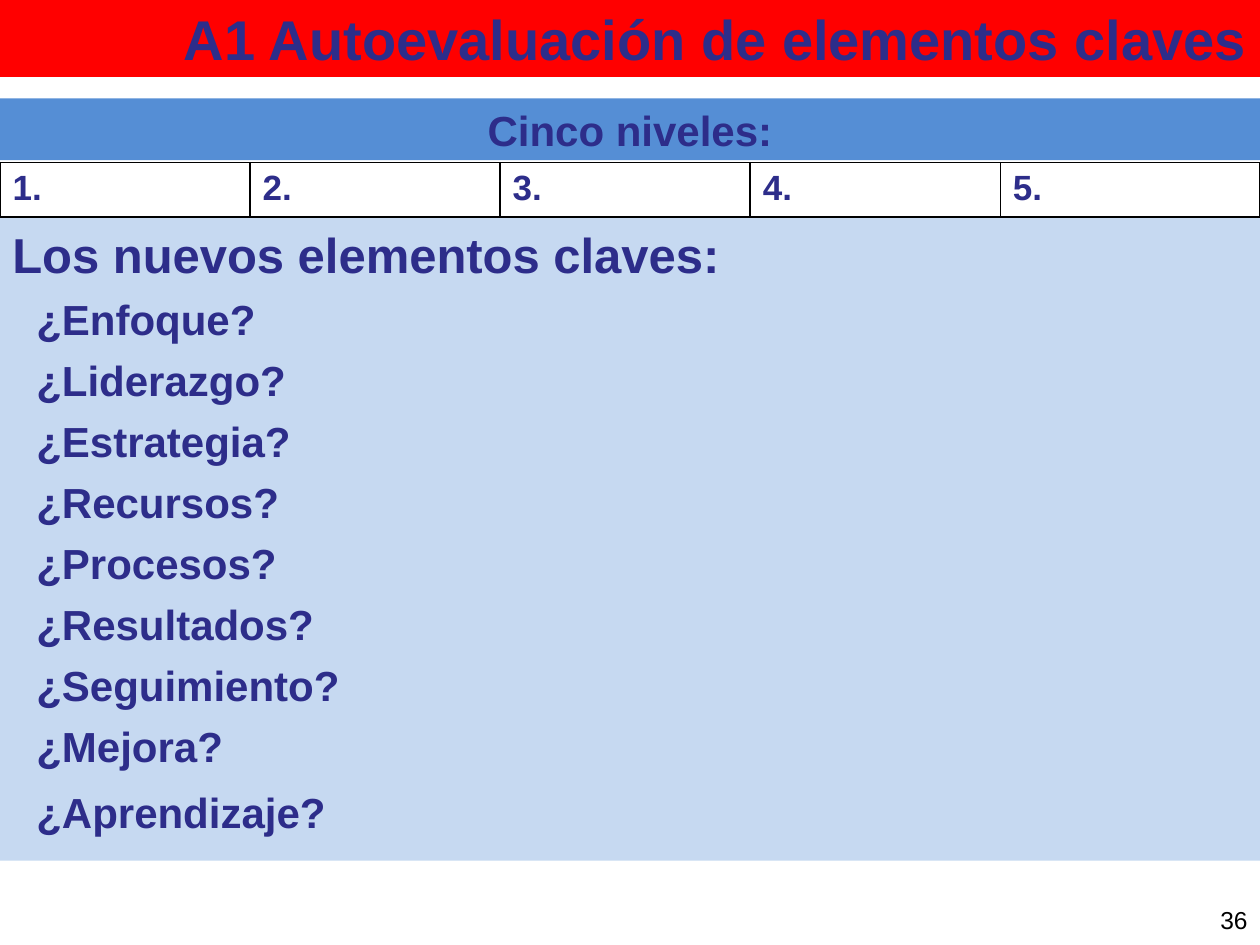
from dataclasses import dataclass

import lxml.etree
import pptx
import pptx.dml.color
import pptx.enum.shapes
import pptx.enum.text
import pptx.oxml.ns
import pptx.util

Pt = pptx.util.Pt
Align = pptx.enum.text.PP_ALIGN
Anchor = pptx.enum.text.MSO_ANCHOR

COLOURS = {
    "title": "FF0000",
    "banner": "558ED5",
    "panel": "C6D9F1",
    "cell": "FFFFFF",
    "border": "000000",
    "text": "2D2D8A",
    "number": "000000",
}
PAGE_WIDTH = 720
PAGE_HEIGHT = 540
ELEMENTS = ["Enfoque", "Liderazgo", "Estrategia", "Recursos", "Procesos",
            "Resultados", "Seguimiento", "Mejora", "Aprendizaje"]
LEVEL_COUNT = 5
LEVEL_WIDTH = 142.9


@dataclass
class Line:
    text: str
    size: float
    align: Align = Align.LEFT
    colour: str = "text"
    bold: bool = True
    level: int = 0
    margin: float = 0
    before: float = 0
    after: float = 0


@dataclass
class Band:
    top: float
    height: float
    fill: str
    lines: list[Line]
    anchor: Anchor = Anchor.MIDDLE


def rgb(name: str) -> pptx.dml.color.RGBColor:
    return pptx.dml.color.RGBColor.from_string(COLOURS[name])


def write_lines(frame, lines: list[Line]) -> None:
    for index, line in enumerate(lines):
        para = frame.paragraphs[0] if index == 0 else frame.add_paragraph()
        para.text = line.text
        para.level = line.level
        para.alignment = line.align
        para.space_before = Pt(line.before)
        para.space_after = Pt(line.after)
        properties = para._p.get_or_add_pPr()
        properties.set("marL", str(Pt(line.margin)))
        properties.set("indent", "0")
        para.font.name = "Arial"
        para.font.size = Pt(line.size)
        para.font.bold = line.bold
        para.font.color.rgb = rgb(line.colour)


def draw_band(page, band: Band) -> None:
    box = page.shapes.add_shape(
        pptx.enum.shapes.MSO_SHAPE.RECTANGLE,
        0, Pt(band.top), Pt(PAGE_WIDTH), Pt(band.height))
    box.shadow.inherit = False
    box.fill.solid()
    box.fill.fore_color.rgb = rgb(band.fill)
    box.line.fill.background()
    frame = box.text_frame
    frame.word_wrap = True
    frame.vertical_anchor = band.anchor
    write_lines(frame, band.lines)


def outline_cell(cell) -> None:
    properties = cell._tc.get_or_add_tcPr()
    qn = pptx.oxml.ns.qn
    for index, side in enumerate(("lnL", "lnR", "lnT", "lnB")):
        border = lxml.etree.Element(qn(f"a:{side}"), w=str(Pt(1)))
        fill = lxml.etree.SubElement(border, qn("a:solidFill"))
        lxml.etree.SubElement(fill, qn("a:srgbClr"), val=COLOURS["border"])
        properties.insert(index, border)


def draw_levels(page, top: float, height: float) -> None:
    table = page.shapes.add_table(
        1, LEVEL_COUNT, 0, Pt(top), Pt(PAGE_WIDTH), Pt(height)).table
    table.first_row = False
    table.horz_banding = False
    last_width = PAGE_WIDTH - LEVEL_WIDTH * (LEVEL_COUNT - 1)
    for index in range(LEVEL_COUNT):
        is_last = index == LEVEL_COUNT - 1
        table.columns[index].width = Pt(last_width if is_last else LEVEL_WIDTH)
        cell = table.cell(0, index)
        cell.fill.solid()
        cell.fill.fore_color.rgb = rgb("cell")
        write_lines(cell.text_frame, [Line(f"{index + 1}.", 20)])
        outline_cell(cell)


def draw_page_number(page, number: int) -> None:
    box = page.shapes.add_textbox(Pt(491.8), Pt(511.2), Pt(228.2), Pt(28.8))
    box.text_frame.word_wrap = True
    box.text_frame.vertical_anchor = Anchor.MIDDLE
    write_lines(box.text_frame, [
        Line(str(number), 14, Align.RIGHT, "number", bold=False)])


def main() -> None:
    deck = pptx.Presentation()
    deck.slide_width = Pt(PAGE_WIDTH)
    deck.slide_height = Pt(PAGE_HEIGHT)
    page = deck.slides.add_slide(deck.slide_layouts[6])

    questions = [
        Line(f"¿{element}?", 24, level=1, margin=13.7, before=3, after=3)
        for element in ELEMENTS]
    questions[-1].before = 6.4
    heading = Line("Los nuevos elementos claves:", 28, after=3)

    draw_band(page, Band(124.6, 367.2, "panel", [heading, *questions],
                         Anchor.TOP))
    draw_band(page, Band(56.2, 35.3, "banner",
                         [Line("Cinco niveles:", 24, Align.CENTER)]))
    draw_levels(page, 92.9, 31)
    draw_band(page, Band(0, 43.9, "title", [
        Line("A1 Autoevaluación de elementos claves", 32, Align.RIGHT)]))
    draw_page_number(page, 36)
    deck.save("out.pptx")


if __name__ == "__main__":
    main()
